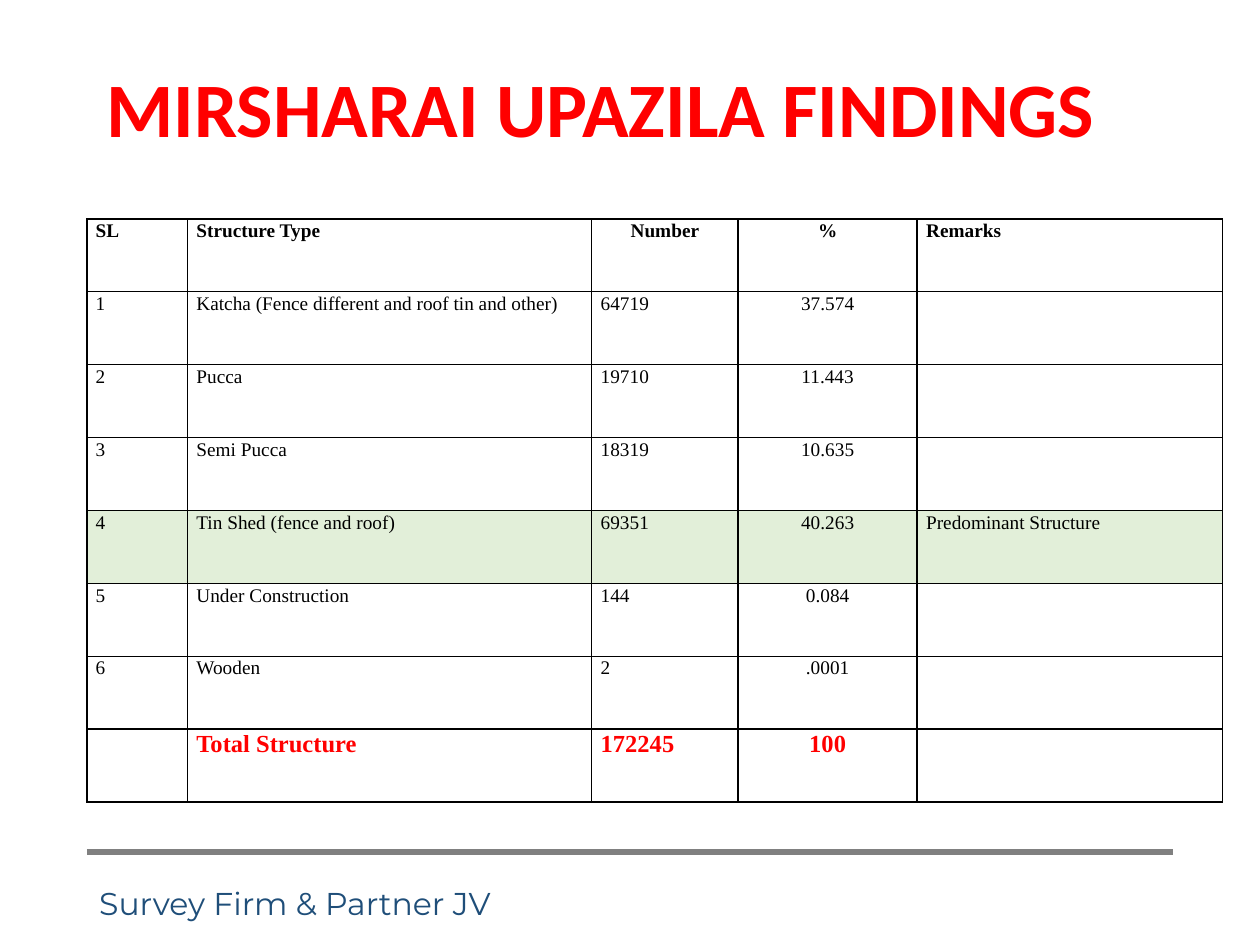
import dataclasses

import pptx
import pptx.dml.color
import pptx.enum.shapes
import pptx.enum.text
import pptx.oxml
import pptx.oxml.ns
import pptx.util
from pptx.util import Cm, Pt

ALIGN = pptx.enum.text.PP_ALIGN
MIDDLE = pptx.enum.text.MSO_ANCHOR.MIDDLE


@dataclasses.dataclass(frozen=True)
class Theme:
    red: str = "FF0000"
    black: str = "000000"
    navy: str = "1F4E79"
    gray: str = "808080"
    highlight: str = "E2EFD9"
    title_font: str = "Calibri"
    footer_font: str = "Montserrat"
    table_font: str = "Times New Roman"
    title_size: int = 44
    footer_size: int = 18
    body_size: int = 11
    total_size: int = 14
    rule_width: float = 3.25
    border_width: float = 1


THEME = Theme()
COLUMN_WIDTHS = (2.03, 8.15, 2.95, 3.61, 6.15)
ROW_HEIGHT = 1.47
HIGHLIGHT_ROW = 4
ROWS = (
    ("SL", "Structure Type", "Number", "%", "Remarks"),
    ("1", "Katcha (Fence different and roof tin and other)", "64719", "37.574", ""),
    ("2", "Pucca", "19710", "11.443", ""),
    ("3", "Semi Pucca", "18319", "10.635", ""),
    ("4", "Tin Shed (fence and roof)", "69351", "40.263", "Predominant Structure"),
    ("5", "Under Construction", "144", "0.084", ""),
    ("6", "Wooden", "2", ".0001", ""),
    ("", "Total Structure", "172245", "100", ""),
)
HEADER_FORMAT = {"name": THEME.table_font, "size": Pt(THEME.body_size), "bold": True}
BODY_FORMAT = {**HEADER_FORMAT, "bold": False}
TOTAL_FORMAT = {**HEADER_FORMAT, "size": Pt(THEME.total_size)}


def rgb(color):
    return pptx.dml.color.RGBColor.from_string(color)


def set_attributes(target, values):
    for name, value in values.items():
        setattr(target, name, value)


def write_text(frame, text, font_format, color, paragraph_format):
    paragraph = frame.paragraphs[0]
    set_attributes(paragraph, paragraph_format)
    run = paragraph.add_run()
    run.text = text
    set_attributes(run.font, font_format)
    run.font.color.rgb = rgb(color)


def add_text(slide, box, text, font_format, color, line_spacing=1.0):
    shape = slide.shapes.add_textbox(*map(Cm, box))
    set_attributes(shape.text_frame, {"word_wrap": True, "vertical_anchor": MIDDLE})
    write_text(shape.text_frame, text, font_format, color, {"line_spacing": line_spacing})


def add_rule(slide, left, right, top):
    connector = slide.shapes.add_connector(
        pptx.enum.shapes.MSO_CONNECTOR.STRAIGHT, Cm(left), Cm(top), Cm(right), Cm(top)
    )
    connector.line.color.rgb = rgb(THEME.gray)
    connector.line.width = Pt(THEME.rule_width)
    properties = connector.element.spPr
    properties.append(pptx.oxml.parse_xml(f"<a:effectLst {pptx.oxml.ns.nsdecls('a')}/>"))


def add_borders(cell):
    properties = cell._tc.get_or_add_tcPr()
    for side in "LRTB":
        properties.append(pptx.oxml.parse_xml(
            f'<a:ln{side} {pptx.oxml.ns.nsdecls("a")} w="{Pt(THEME.border_width)}">'
            f'<a:solidFill><a:srgbClr val="{THEME.black}"/></a:solidFill></a:ln{side}>'
        ))


def format_cell(cell, fill):
    """Borders come first, because the fill must follow them in the XML."""
    add_borders(cell)
    if fill:
        cell.fill.solid()
        cell.fill.fore_color.rgb = rgb(fill)
    else:
        cell.fill.background()
    set_attributes(cell, {
        "margin_left": Cm(0.18), "margin_right": Cm(0.18),
        "margin_top": 0, "margin_bottom": 0,
    })


def row_style(row_index):
    """Return the font format and text colour of a row."""
    if row_index == 0:
        return HEADER_FORMAT, THEME.black
    if row_index == len(ROWS) - 1:
        return TOTAL_FORMAT, THEME.red
    return BODY_FORMAT, THEME.black


def is_centered(row_index, column_index):
    return column_index == 3 or (row_index, column_index) == (0, 2)


def add_findings_table(slide, left, top):
    table = slide.shapes.add_table(
        len(ROWS), len(COLUMN_WIDTHS), Cm(left), Cm(top),
        Cm(sum(COLUMN_WIDTHS)), Cm(ROW_HEIGHT * len(ROWS)),
    ).table
    set_attributes(table, {"first_row": False, "horz_banding": False})
    for column, width in zip(table.columns, COLUMN_WIDTHS):
        column.width = Cm(width)
    for row_index, texts in enumerate(ROWS):
        table.rows[row_index].height = Cm(ROW_HEIGHT)
        font_format, color = row_style(row_index)
        fill = THEME.highlight if row_index == HIGHLIGHT_ROW else None
        for column_index, text in enumerate(texts):
            cell = table.cell(row_index, column_index)
            format_cell(cell, fill)
            if text:
                centered = is_centered(row_index, column_index)
                write_text(cell.text_frame, text, font_format, color, {
                    "alignment": ALIGN.CENTER if centered else ALIGN.LEFT,
                    "line_spacing": 1.07,
                })


def main():
    presentation = pptx.Presentation()
    set_attributes(presentation, {"slide_width": Cm(25.4), "slide_height": Cm(19.05)})
    slide = presentation.slides.add_slide(presentation.slide_layouts[6])
    add_rule(slide, 1.75, 23.65, 17.17)
    add_text(slide, (1.75, 17.53, 13.69, 1.35), "Survey Firm & Partner JV",
             {"name": THEME.footer_font, "size": Pt(THEME.footer_size)}, THEME.navy)
    add_text(slide, (1.9, 0.43, 22.81, 3.68), "MIRSHARAI UPAZILA FINDINGS",
             {"name": THEME.title_font, "size": Pt(THEME.title_size), "bold": True},
             THEME.red, line_spacing=0.9)
    add_findings_table(slide, 1.75, 4.41)
    presentation.save("out.pptx")


if __name__ == "__main__":
    main()
